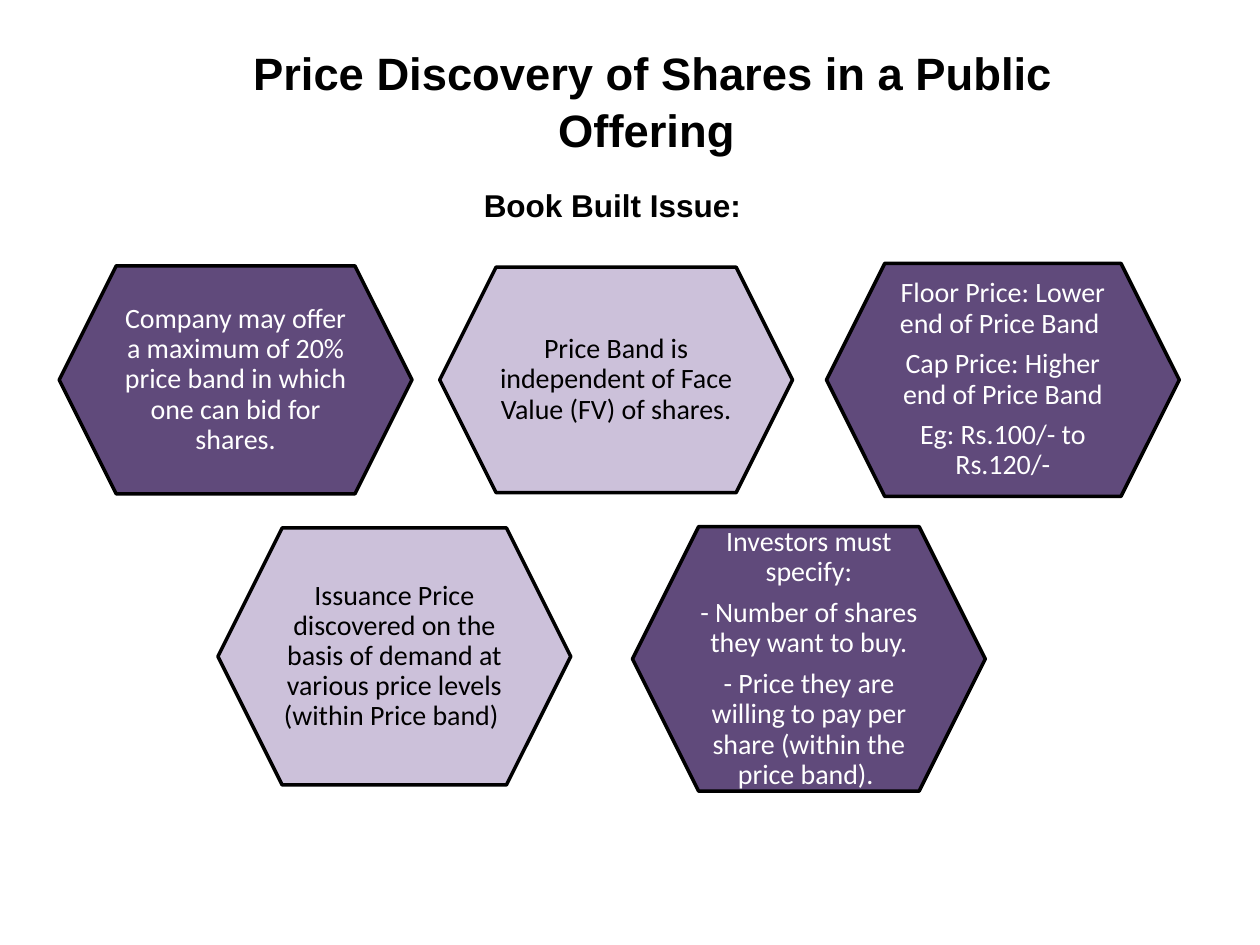
from pptx import Presentation
from pptx.dml.color import RGBColor
from pptx.enum.shapes import MSO_SHAPE as Shape
from pptx.enum.text import MSO_ANCHOR as Anchor, PP_ALIGN as Align
from pptx.util import Inches, Pt

COLS, ROWS = 100, 75
DARK, PALE, BLACK, WHITE = "604A7B", "CCC1DA", "000000", "FFFFFF"


def tint(code):
    """Turn a hex string into a colour."""
    return RGBColor.from_string(code)


def write(frame, lines, font="Calibri", size=16, color=BLACK, bold=False,
          pitch=None, after=0, inset=None, anchor=Anchor.TOP):
    """Fill a text frame with centred paragraphs."""
    frame.word_wrap = True
    frame.vertical_anchor = anchor
    if inset is not None:
        frame.margin_left = frame.margin_right = Inches(inset)
        frame.margin_top = frame.margin_bottom = Inches(inset)
    for i, line in enumerate(lines):
        para = frame.add_paragraph() if i else frame.paragraphs[0]
        para.alignment = Align.CENTER
        para.space_after = Pt(after)
        if pitch:
            para.line_spacing = pitch
        run = para.add_run()
        run.text = line
        run.font.name = font
        run.font.size = Pt(size)
        run.font.bold = bold
        run.font.color.rgb = tint(color)


class Deck:
    """Hold the style and the current slide."""

    def __init__(self):
        """Open a blank slide with its grid."""
        self.show = Presentation()
        self.show.slide_width, self.show.slide_height = Inches(10), Inches(7.5)
        self.slide = self.show.slides.add_slide(self.show.slide_layouts[6])

    def place(self, x, y, w, h):
        """Turn grid columns and rows into slide lengths."""
        col, row = self.show.slide_width / COLS, self.show.slide_height / ROWS
        return [round(n) for n in (x * col, y * row, w * col, h * row)]

    def head(self, text, x, y, w, h, **style):
        """Add a bold heading."""
        box = self.slide.shapes.add_textbox(*self.place(x, y, w, h))
        write(box.text_frame, [text], font="Arial", bold=True, **style)

    def hexagon(self, lines, x, y, high, fill, wide=28):
        """Add a hexagon and its text around a centre point."""
        group = self.slide.shapes.add_group_shape().shapes
        shape = group.add_shape(
            Shape.HEXAGON, *self.place(x - wide / 2, y - high / 2, wide, high))
        shape.shadow.inherit = False
        shape.fill.solid()
        shape.fill.fore_color.rgb = tint(fill)
        shape.line.color.rgb = tint(BLACK)
        shape.line.width = Pt(2)
        w, h = 23.3 - 0.16 * high, 0.72 * high
        box = group.add_textbox(*self.place(x - w / 2, y - h / 2, w, h))
        write(box.text_frame, lines, color=WHITE if fill == DARK else BLACK,
              pitch=0.9, after=6, inset=0.07, anchor=Anchor.MIDDLE)


def main():
    """Build the slide and save it."""
    deck = Deck()
    deck.head("Price Discovery of Shares in a Public Offering ",
              18.2, 2.9, 67.2, 9.7, size=25.9, pitch=1.05)
    deck.head("Book Built Issue: ", 4.7, 14.3, 88.5, 11.2, size=18, after=4.2)
    facts = [
        (18.7, 30.15, 18.1, DARK,
         ["Company may offer a maximum of 20% price band in which one can bid "
          "for shares."]),
        (48.9, 30.15, 17.9, PALE,
         ["Price Band is independent of Face Value (FV) of shares."]),
        (79.6, 30.15, 18.5, DARK,
         ["Floor Price: Lower end of Price Band ",
          "Cap Price: Higher end of Price Band",
          "Eg: Rs.100/- to Rs.120/-"]),
        (31.3, 52.1, 20.4, PALE,
         ["Issuance Price discovered on the basis of demand at various price "
          "levels (within Price band) "]),
        (64.2, 52.3, 21, DARK,
         ["Investors must specify:",
          "- Number of shares they want to buy.",
          "- Price they are willing to pay per share (within the price band). "]),
    ]
    for x, y, high, fill, lines in facts:
        deck.hexagon(lines, x, y, high, fill)
    deck.show.save("out.pptx")


if __name__ == "__main__":
    main()
